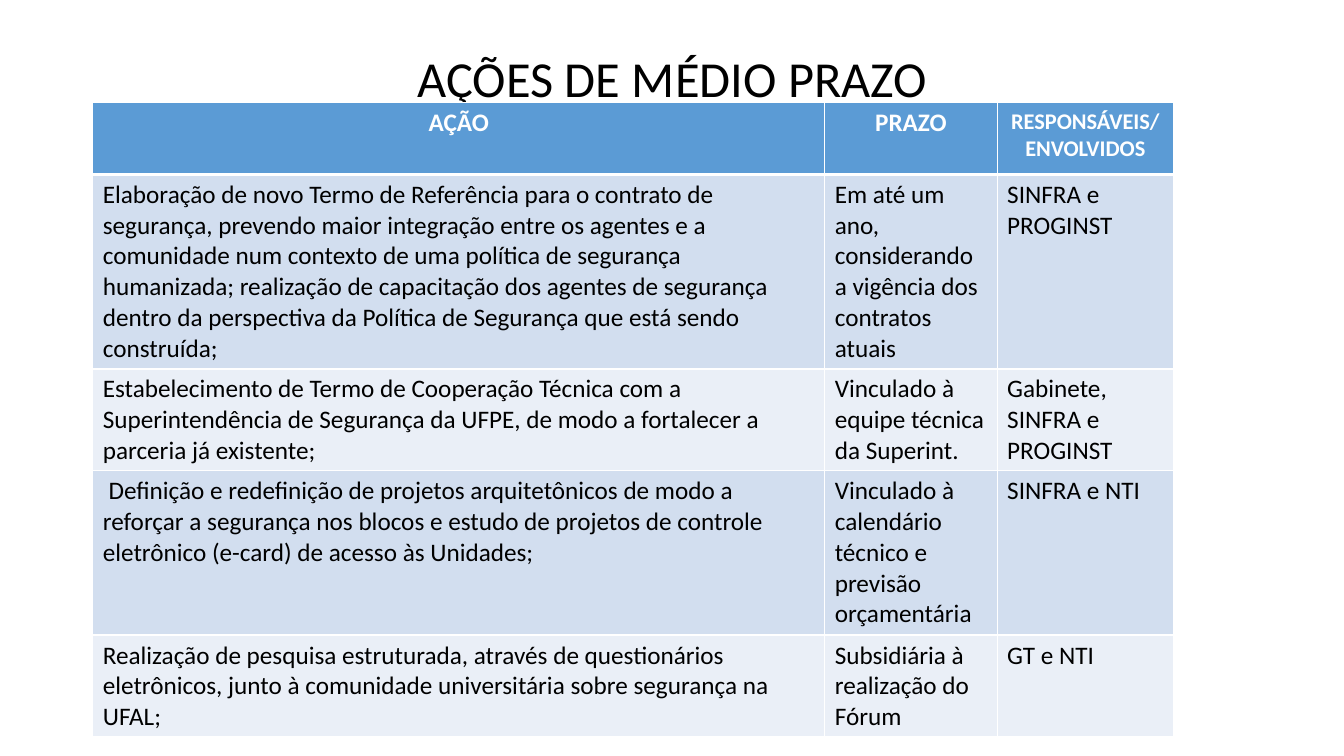
import pptx
import pptx.util
import pptx.dml.color
import pptx.enum.text
import pptx.oxml
import pptx.oxml.ns
import lxml.etree

Inches, Pt = pptx.util.Inches, pptx.util.Pt
ALIGN, ANCHOR = pptx.enum.text.PP_ALIGN, pptx.enum.text.MSO_ANCHOR

TITLE = "AÇÕES DE MÉDIO PRAZO"
HEADERS = ["AÇÃO", "PRAZO", "RESPONSÁVEIS/ENVOLVIDOS"]
ACTIONS = [
    ("Elaboração de novo Termo de Referência para o contrato de segurança, "
     "prevendo maior integração entre os agentes e a comunidade num contexto "
     "de uma política de segurança humanizada; realização de capacitação dos "
     "agentes de segurança dentro da perspectiva da Política de Segurança que "
     "está sendo construída;",
     "Em até um ano, considerando a vigência dos contratos atuais",
     "SINFRA e PROGINST"),
    ("Estabelecimento de Termo de Cooperação Técnica com a Superintendência "
     "de Segurança da UFPE, de modo a fortalecer a parceria já existente;",
     "Vinculado à equipe técnica da Superint.",
     "Gabinete, SINFRA e PROGINST"),
    (" Definição e redefinição de projetos arquitetônicos de modo a reforçar "
     "a segurança nos blocos e estudo de projetos de controle eletrônico "
     "(e-card) de acesso às Unidades;",
     "Vinculado à calendário técnico e previsão orçamentária",
     "SINFRA e NTI"),
    ("Realização de pesquisa estruturada, através de questionários "
     "eletrônicos, junto à comunidade universitária sobre segurança na UFAL;",
     "Subsidiária à realização do Fórum",
     "GT e NTI"),
]
COLUMN_WIDTHS = [7.26, 1.71, 1.75]
ROW_HEIGHTS = [0.71, 1.93, 1.01, 1.63, 1.01]
LEFT, TABLE_TOP = 0.92, 1.02

THEME = {
    "font": "Calibri",
    "title_size": 36, "body_size": 18, "small_header_size": 16,
    "text": "000000", "header_text": "FFFFFF", "border": "FFFFFF",
    "header_fill": "5B9BD5", "bands": ["D2DEEF", "EAEFF7"],
}


def rgb(name):
    return pptx.dml.color.RGBColor.from_string(name)


def write(tf, text, size, color, bold=False, align=ALIGN.LEFT):
    p = tf.paragraphs[0]
    p.alignment = align
    r = p.add_run()
    r.text = text
    r.font.name = THEME["font"]
    r.font.size = Pt(size)
    r.font.bold = bold
    r.font.color.rgb = rgb(color)
    return p


def set_borders(cell, top, bottom):
    """Draw the four cell borders; widths in points."""
    tc_pr = cell._tc.get_or_add_tcPr()
    sides = [("lnL", 1), ("lnR", 1), ("lnT", top), ("lnB", bottom)]
    for i, (side, width) in enumerate(sides):
        ln = pptx.oxml.parse_xml(
            f'<a:{side} {pptx.oxml.ns.nsdecls("a")} w="{Pt(width)}">'
            f'<a:solidFill><a:srgbClr val="{THEME["border"]}"/></a:solidFill>'
            f'</a:{side}>')
        tc_pr.insert(i, ln)


def add_title(s):
    sp = s.shapes.add_textbox(Inches(LEFT), Inches(0.4), Inches(11.5), Inches(0.82))
    tf = sp.text_frame
    tf.word_wrap = True
    tf.vertical_anchor = ANCHOR.MIDDLE
    p = write(tf, TITLE, THEME["title_size"], THEME["text"], align=ALIGN.CENTER)
    p.line_spacing = 0.9


def add_actions_table(s):
    rows = [HEADERS, *ACTIONS]
    table = s.shapes.add_table(
        len(rows), len(HEADERS), Inches(LEFT), Inches(TABLE_TOP),
        Inches(sum(COLUMN_WIDTHS)), Inches(sum(ROW_HEIGHTS))).table
    for column, width in zip(table.columns, COLUMN_WIDTHS):
        column.width = Inches(width)
    for row, height in zip(table.rows, ROW_HEIGHTS):
        row.height = Inches(height)

    for i, texts in enumerate(rows):
        for j, text in enumerate(texts):
            cell = table.cell(i, j)
            cell.fill.solid()
            if i == 0:
                last = j == len(HEADERS) - 1
                size = THEME["small_header_size" if last else "body_size"]
                cell.fill.fore_color.rgb = rgb(THEME["header_fill"])
                write(cell.text_frame, text, size, THEME["header_text"],
                      bold=True, align=ALIGN.CENTER)
            else:
                cell.fill.fore_color.rgb = rgb(THEME["bands"][(i - 1) % 2])
                write(cell.text_frame, text, THEME["body_size"], THEME["text"])
            set_borders(cell, top=3 if i == 1 else 1, bottom=3 if i == 0 else 1)


def main():
    prs = pptx.Presentation()
    prs.slide_width, prs.slide_height = Inches(13.33), Inches(7.5)
    s = prs.slides.add_slide(prs.slide_layouts[6])
    add_title(s)
    add_actions_table(s)
    prs.save("out.pptx")


if __name__ == "__main__":
    main()
